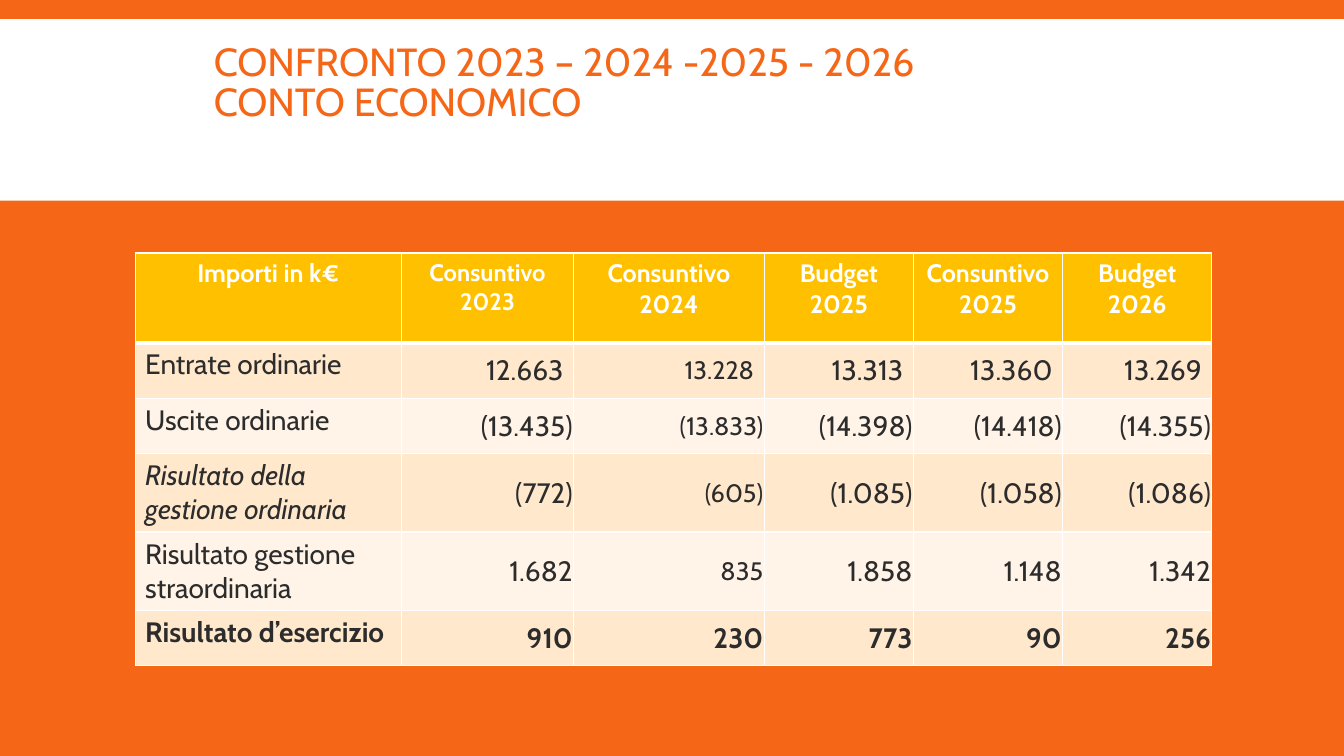
from lxml import etree
from pptx import Presentation
from pptx.dml.color import RGBColor
from pptx.enum.shapes import MSO_SHAPE
from pptx.enum.text import MSO_ANCHOR, PP_ALIGN
from pptx.oxml.ns import qn
from pptx.util import Inches, Pt

COLORS = {"orange": "F56617", "white": "FFFFFF", "header": "FFC000",
          "odd": "FFE8CC", "even": "FFF4E7", "text": "2C2C2C"}
FONT = "Cabin"


def add_run(p, text, size, color, bold=False, italic=False):
    r = p.add_run()
    r.text = text
    r.font.name, r.font.size = FONT, Pt(size)
    r.font.bold, r.font.italic = bold, italic
    r.font.color.rgb = RGBColor.from_string(COLORS[color])


def style_cell(cell, fill, bottom_width=1):
    """Give the cell white borders and a solid fill."""
    tc_pr = cell._tc.get_or_add_tcPr()
    for side, width in (("L", 1), ("R", 1), ("T", 1), ("B", bottom_width)):
        ln = etree.SubElement(tc_pr, qn(f"a:ln{side}"), w=str(Pt(width)))
        solid = etree.SubElement(ln, qn("a:solidFill"))
        etree.SubElement(solid, qn("a:srgbClr"), val=COLORS["white"])
    cell.fill.solid()
    cell.fill.fore_color.rgb = RGBColor.from_string(COLORS[fill])


prs = Presentation()
prs.slide_width, prs.slide_height = Inches(13.33), Inches(7.5)
s = prs.slides.add_slide(prs.slide_layouts[5])
s.background.fill.solid()
s.background.fill.fore_color.rgb = RGBColor.from_string(COLORS["orange"])

# White band, placed behind the title
band = s.shapes.add_shape(MSO_SHAPE.RECTANGLE, 0, Inches(0.19), Inches(13.33), Inches(1.8))
band.shadow.inherit = False
band.fill.solid()
band.fill.fore_color.rgb = RGBColor.from_string(COLORS["white"])
band.line.fill.background()
s.shapes._spTree.insert(2, band._element)

# Title
title = s.shapes.title
title.left, title.top = Inches(2.02), Inches(0.21)
title.width, title.height = Inches(9.75), Inches(1.67)
tf = title.text_frame
tf.word_wrap = True
tf.vertical_anchor = MSO_ANCHOR.TOP
tf.margin_top = Inches(0.23)
p = tf.paragraphs[0]
p.alignment, p.line_spacing = PP_ALIGN.LEFT, 0.85
add_run(p, "CONFRONTO 2023 – 2024 -2025 - 2026", 28, "orange")
p.add_line_break()
add_run(p, "CONTO ECONOMICO", 28, "orange")

# Income statement table
rows = [
    ["Importi in k€", "Consuntivo 2023", "Consuntivo 2024", "Budget 2025",
     "Consuntivo 2025", "Budget 2026"],
    ["Entrate ordinarie", "12.663", "13.228", "13.313", "13.360", "13.269"],
    ["Uscite ordinarie", "(13.435)", "(13.833)", "(14.398)", "(14.418)", "(14.355)"],
    ["Risultato della gestione ordinaria", "(772)", "(605)", "(1.085)", "(1.058)", "(1.086)"],
    ["Risultato gestione straordinaria", "1.682", "835", "1.858", "1.148", "1.342"],
    ["Risultato d’esercizio", "910", "230", "773", "90", "256"],
]
col_widths = [2.64, 1.71, 1.89, 1.48, 1.48, 1.48]
row_heights = [0.89, 0.55, 0.55, 0.77, 0.77, 0.55]
DIFFERENCE_ROW, TOTAL_ROW = 3, 5

table = s.shapes.add_table(len(rows), len(col_widths), Inches(1.34), Inches(2.51),
                           Inches(sum(col_widths)), Inches(sum(row_heights))).table
for col, width in zip(table.columns, col_widths):
    col.width = Inches(width)
for row, height in zip(table.rows, row_heights):
    row.height = Inches(height)

for i, row in enumerate(rows):
    for j, text in enumerate(row):
        cell = table.cell(i, j)
        p = cell.text_frame.paragraphs[0]
        if i == 0:
            style_cell(cell, "header", bottom_width=3)
            p.alignment = PP_ALIGN.CENTER
            add_run(p, text, 17 if j == 1 else 18, "white", bold=True)
            continue
        style_cell(cell, "odd" if i % 2 else "even")
        if j > 0:
            p.alignment = PP_ALIGN.RIGHT
            cell.vertical_anchor = MSO_ANCHOR.MIDDLE
            if i > 1:
                cell.margin_left = cell.margin_right = cell.margin_top = Inches(0.01)
                cell.margin_bottom = 0
        size = 18 if j == 2 and i != TOTAL_ROW else 20
        add_run(p, text, size, "text", bold=i == TOTAL_ROW,
                italic=i == DIFFERENCE_ROW and j == 0)

prs.save("out.pptx")
